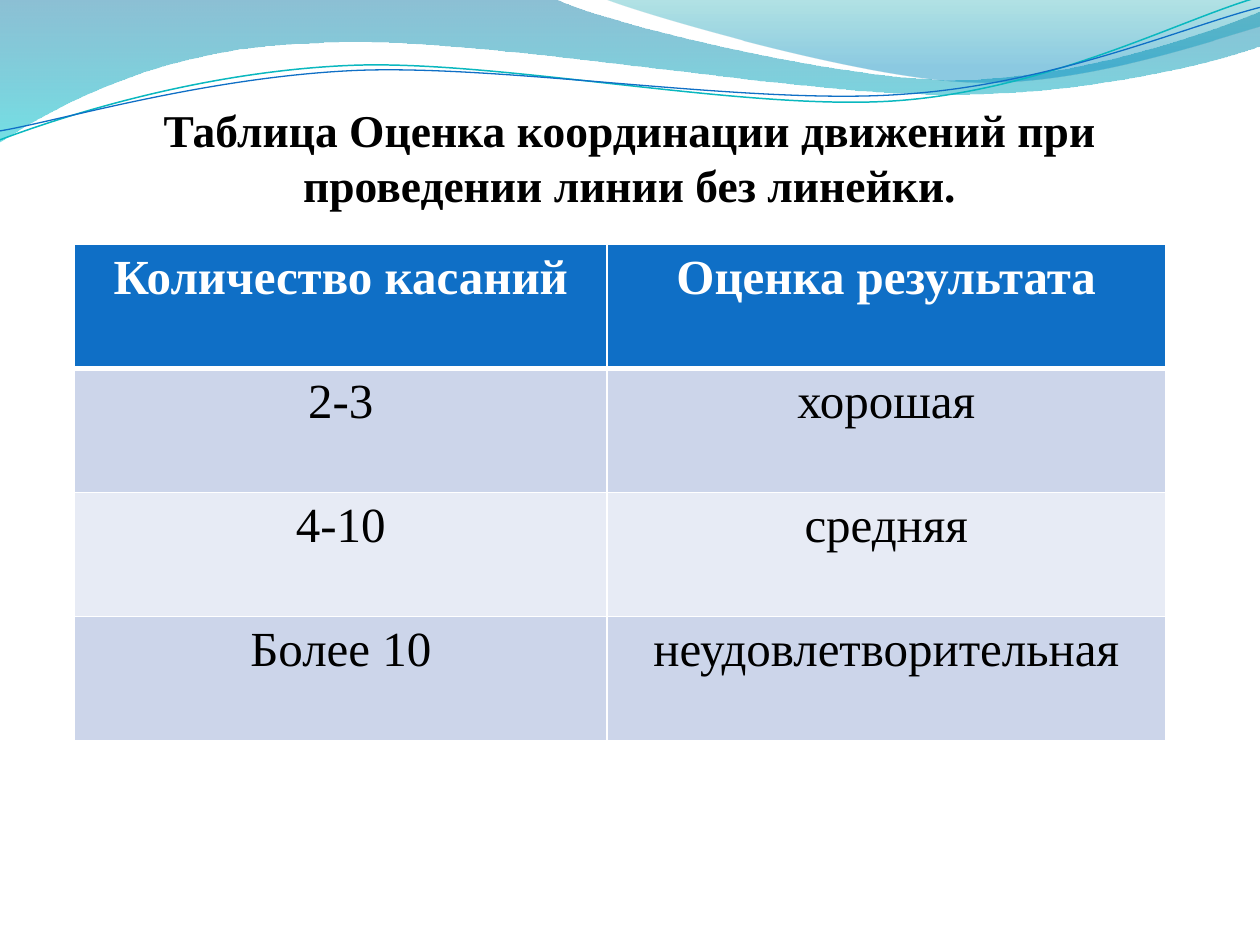
from lxml import etree
from pptx import Presentation
from pptx.dml import color as c
from pptx.enum import text as t
from pptx.oxml import ns
from pptx.util import Cm, Pt

FONT = "Times New Roman"
HUES = {
    "head": "0F6FC6", "odd": "CCD5EA", "even": "E7EBF5",
    "white": "FFFFFF", "black": "000000",
    "steel": "0074A1", "aqua": "00C6CF",
    "teal": "00A1A9", "sky": "008BBF", "line": "0AB8BF",
}
TITLE = "Таблица Оценка координации движений при проведении линии без линейки."
ROWS = [
    ("Количество касаний", "Оценка результата"),
    ("2-3", "хорошая"),
    ("4-10", "средняя"),
    ("Более 10", "неудовлетворительная"),
]
BACK = [
    (0, 0), (11.18, -0.03),
    (12.09, 0.43, 16.87, 1.6, 19.25, 1.6),
    (21.67, 1.6, 24.33, 0.66, 25.4, 0.23),
    (25.43, 0.91),
    (24.97, 1.12, 22.1, 1.93, 18.95, 1.9),
    (15.8, 1.9, 9.7, 0.71, 6.53, 0.86),
    (3.28, 0.91, 1.17, 2.11, -0.03, 2.87),
]
FRONT = [
    (12.17, -0.03),
    (12.93, 0.28, 17.32, 1.57, 19.53, 1.65),
    (21.74, 1.75, 24.41, 0.81, 25.4, 0.53),
    (25.4, 0),
]
UPPER = [
    (0, 2.82),
    (1.22, 2.36, 4.01, 1.45, 7.04, 1.32),
    (10.03, 1.19, 15.06, 2.26, 18.11, 2.03),
    (21.16, 1.8, 23.83, 0.38, 25.35, -0.05),
]
LOWER = [
    (0, 2.64),
    (1.19, 2.44, 4.17, 1.55, 7.19, 1.42),
    (10.24, 1.3, 15.16, 2.13, 18.21, 1.9),
    (21.23, 1.7, 23.9, 0.53, 25.4, 0.15),
]


def hue(name):
    return c.RGBColor.from_string(HUES[name])


def trace(slide, steps, close):
    spots = [(Cm(step[-2]), Cm(step[-1])) for step in steps]
    pen = slide.shapes.build_freeform(*spots[0])
    pen.add_line_segments(spots[1:], close=close)
    shape = pen.convert_to_shape()
    shape.shadow.inherit = False
    parts = list(shape._element.iter(ns.qn("a:lnTo")))
    for part, step in zip(parts, steps[1:]):
        if len(step) == 6:
            bend(shape, part, step)
    return shape


def bend(shape, part, step):
    curve = etree.Element(ns.qn("a:cubicBezTo"))
    for x, y in zip(step[::2], step[1::2]):
        etree.SubElement(
            curve, ns.qn("a:pt"),
            x=str(Cm(x) - shape.left), y=str(Cm(y) - shape.top),
        )
    part.getparent().replace(part, curve)


def add_wave(slide, steps, stops):
    shape = trace(slide, steps, True)
    shape.line.fill.background()
    shape.fill.gradient()
    shape.fill.gradient_angle = 270
    for stop, (spot, name, alpha) in zip(shape.fill.gradient_stops, stops):
        stop.position = spot
        stop.color.rgb = hue(name)
        tint = stop._gs.find(ns.qn("a:srgbClr"))
        etree.SubElement(tint, ns.qn("a:alpha"), val=str(alpha * 1000))


def add_curve(slide, steps, name, width):
    shape = trace(slide, steps, False)
    shape.fill.background()
    shape.line.color.rgb = hue(name)
    shape.line.width = Pt(width)


def style(para, size, name, bold):
    para.alignment = t.PP_ALIGN.CENTER
    font = para.font
    font.name, font.size, font.bold = FONT, Pt(size), bold
    font.color.rgb = hue(name)


def set_title(slide):
    box = slide.shapes.title
    box.left, box.top, box.width, box.height = Cm(1.27), Cm(1.93), Cm(22.86), Cm(15.65)
    frame = box.text_frame
    frame.text = TITLE
    frame.word_wrap = True
    frame.auto_size = t.MSO_AUTO_SIZE.NONE
    frame.vertical_anchor = t.MSO_ANCHOR.TOP
    para = frame.paragraphs[0]
    para.space_before = Pt(5)
    style(para, 26, "black", True)


def set_edge(cell, side, width):
    props = cell._tc.get_or_add_tcPr()
    line = etree.SubElement(props, ns.qn("a:ln" + side), w=str(Pt(width)))
    fill = etree.SubElement(line, ns.qn("a:solidFill"))
    etree.SubElement(fill, ns.qn("a:srgbClr"), val=HUES["white"])


def set_cell(cell, words, row):
    head = row == 0
    for side in "LRTB":
        thick = (row, side) in ((0, "B"), (1, "T"))
        set_edge(cell, side, 3 if thick else 1)
    cell.fill.solid()
    cell.fill.fore_color.rgb = hue("head" if head else "odd" if row % 2 else "even")
    cell.text = words
    style(cell.text_frame.paragraphs[0], 28, "white" if head else "black", head)


def add_grid(slide):
    wide, high = (10.74, 11.25), 2.5
    grid = slide.shapes.add_table(
        len(ROWS), len(wide), Cm(1.5), Cm(4.93), Cm(sum(wide)), Cm(high * len(ROWS))
    ).table
    for col, width in zip(grid.columns, wide):
        col.width = Cm(width)
    for i, row in enumerate(ROWS):
        grid.rows[i].height = Cm(high)
        for j, words in enumerate(row):
            set_cell(grid.cell(i, j), words, i)


def main():
    deck = Presentation()
    deck.slide_width, deck.slide_height = Cm(25.4), Cm(19.05)
    slide = deck.slides.add_slide(deck.slide_layouts[5])
    add_wave(slide, BACK, [(0, "steel", 45), (1, "aqua", 55)])
    add_wave(slide, FRONT, [(0, "teal", 30), (0.8, "sky", 45)])
    add_curve(slide, UPPER, "line", 0.85)
    add_curve(slide, LOWER, "head", 0.75)
    set_title(slide)
    add_grid(slide)
    deck.save("out.pptx")


if __name__ == "__main__":
    main()
